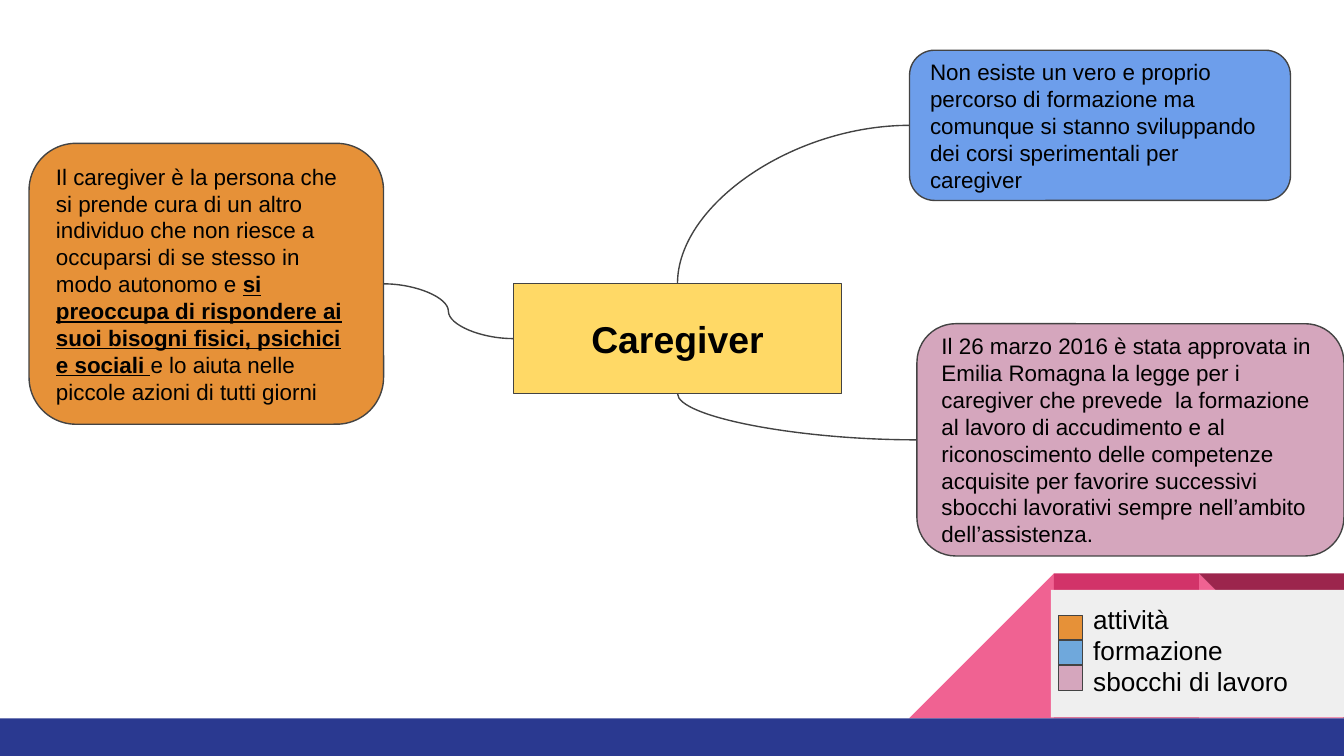
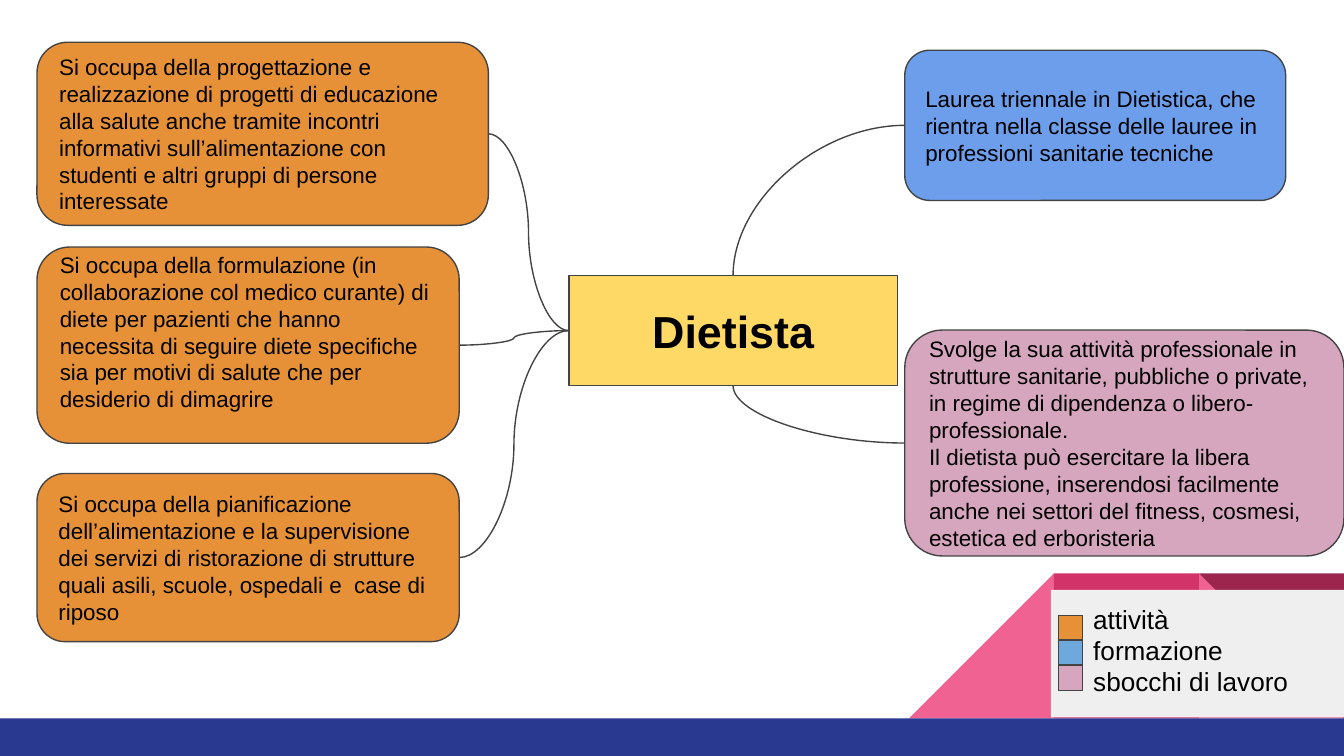
import dataclasses
import typing

import lxml.etree
import pptx
import pptx.dml.color
import pptx.enum.shapes
import pptx.enum.text
import pptx.oxml.ns
import pptx.util

Cm = pptx.util.Cm
qn = pptx.oxml.ns.qn
ShapeType = pptx.enum.shapes.MSO_SHAPE
Anchor = pptx.enum.text.MSO_ANCHOR
Align = pptx.enum.text.PP_ALIGN

TOP, LEFT, BOTTOM, RIGHT = range(4)


@dataclasses.dataclass(frozen=True)
class Theme:
    font: str = "Arial"
    text: str = "000000"
    outline: str = "434343"
    topic: str = "FFD966"
    activity: str = "E69138"
    training: str = "6D9EEB"
    training_key: str = "6FA8DC"
    career: str = "D5A6BD"
    legend: str = "EFEFEF"
    band: str = "2A3990"
    light_pink: str = "F06292"
    pink: str = "D23369"
    dark_pink: str = "9C254D"
    body_size: int = 12
    legend_size: int = 14
    line_width: float = 0.75


THEME = Theme()


class Box(typing.NamedTuple):
    left: float
    top: float
    width: float
    height: float


@dataclasses.dataclass(frozen=True)
class Leaf:
    box: Box
    color: str
    text: str
    leaf_side: int
    topic_side: int
    bottom_inset: float = 0.25


@dataclasses.dataclass(frozen=True)
class ConceptMap:
    topic: str
    topic_size: int
    topic_left: float
    topic_top: float
    leaves: tuple[Leaf, ...]


@dataclasses.dataclass(frozen=True)
class Ornament:
    kind: typing.Any
    box: Box
    color: str
    flipped: bool = False
    rotation: int = 0


SLIDE_WIDTH, SLIDE_HEIGHT = 25.4, 14.29
TILE = 2.74
BAND_TOP = 13.58
TILE_TOP = BAND_TOP - TILE
TILE_BOXES = [Box(SLIDE_WIDTH - n * TILE, TILE_TOP, TILE, TILE) for n in (3, 2, 1)]

ORNAMENTS = (
    Ornament(ShapeType.RIGHT_TRIANGLE, TILE_BOXES[2], THEME.light_pink),
    Ornament(ShapeType.RIGHT_TRIANGLE, TILE_BOXES[0], THEME.light_pink, flipped=True),
    Ornament(ShapeType.RECTANGLE, TILE_BOXES[1], THEME.pink),
    Ornament(ShapeType.RIGHT_TRIANGLE, TILE_BOXES[2], THEME.dark_pink, rotation=180),
    Ornament(ShapeType.RECTANGLE,
             Box(0, BAND_TOP, SLIDE_WIDTH, SLIDE_HEIGHT - BAND_TOP), THEME.band),
)

LEGEND_BOX = Box(19.86, 11.15, 5.54, 2.41)
LEGEND = (
    ("attività", THEME.activity),
    ("formazione", THEME.training_key),
    ("sbocchi di lavoro", THEME.career),
)
SWATCH = Box(20, 11.63, 0.46, 0.48)
SWATCH_STEP = 0.47

MAPS = (
    ConceptMap("Caregiver", 20, 9.7, 5.36, (
        Leaf(Box(0.55, 2.71, 6.7, 5.31), THEME.activity,
             "Il caregiver è la persona che si prende cura di un altro individuo che non "
             "riesce a occuparsi di se stesso in modo autonomo e *si preoccupa di rispondere "
             "ai suoi bisogni fisici, psichici e sociali *e lo aiuta nelle piccole azioni "
             "di tutti giorni", RIGHT, LEFT),
        Leaf(Box(17.19, 0.95, 7.2, 2.84), THEME.training,
             "Non esiste un vero e proprio percorso di formazione ma comunque si stanno "
             "sviluppando dei corsi sperimentali per caregiver", LEFT, TOP),
        Leaf(Box(17.33, 6.12, 8.07, 4.39), THEME.career,
             "Il 26 marzo 2016 è stata approvata in Emilia Romagna la legge per i caregiver "
             "che prevede  la formazione al lavoro di accudimento e al riconoscimento delle "
             "competenze acquisite per favorire successivi sbocchi lavorativi sempre "
             "nell’ambito dell’assistenza.", LEFT, BOTTOM),
    )),
    ConceptMap("Dietista", 24, 10.75, 5.21, (
        Leaf(Box(0.7, 0.8, 8.53, 3.46), THEME.activity,
             "Si occupa della progettazione e realizzazione di progetti di educazione alla "
             "salute anche tramite incontri informativi sull’alimentazione con studenti e "
             "altri gruppi di persone interessate", RIGHT, LEFT),
        Leaf(Box(0.7, 4.67, 7.98, 3.71), THEME.activity,
             "Si occupa della formulazione (in collaborazione col medico curante) di diete "
             "per pazienti che hanno necessita di seguire diete specifiche sia per motivi "
             "di salute che per desiderio di dimagrire", RIGHT, LEFT, bottom_inset=0.76),
        Leaf(Box(0.7, 8.95, 7.98, 3.18), THEME.activity,
             "Si occupa della pianificazione dell’alimentazione e la supervisione dei "
             "servizi di ristorazione di strutture quali asili, scuole, ospedali e  case "
             "di riposo", RIGHT, LEFT),
        Leaf(Box(17.1, 0.95, 7.2, 2.84), THEME.training,
             "Laurea triennale in Dietistica, che rientra nella classe delle lauree in "
             "professioni sanitarie tecniche", LEFT, TOP),
        Leaf(Box(17.1, 6.24, 8.3, 4.27), THEME.career,
             "Svolge la sua attività professionale in strutture sanitarie, pubbliche o "
             "private, in regime di dipendenza o libero-professionale.\n"
             "Il dietista può esercitare la libera professione, inserendosi facilmente "
             "anche nei settori del fitness, cosmesi, estetica ed erboristeria",
             LEFT, BOTTOM),
    )),
)


def apply_format(target: typing.Any, values: dict[str, typing.Any]) -> None:
    for name, value in values.items():
        setattr(target, name, value)


def rgb(color: str) -> pptx.dml.color.RGBColor:
    return pptx.dml.color.RGBColor.from_string(color)


def place(shape: typing.Any, box: Box) -> None:
    apply_format(shape, {name: Cm(value) for name, value in box._asdict().items()})


def outline(line: typing.Any) -> None:
    line.fill.solid()
    line.color.rgb = rgb(THEME.outline)
    line.width = pptx.util.Pt(THEME.line_width)


def paint(shape: typing.Any, color: str, outlined: bool = True) -> None:
    shape.fill.solid()
    shape.fill.fore_color.rgb = rgb(color)
    if outlined:
        outline(shape.line)
    else:
        shape.line.fill.background()


def add_box(slide: typing.Any, kind: typing.Any, box: Box, color: str,
            outlined: bool = True) -> typing.Any:
    shape = slide.shapes.add_shape(kind, *map(Cm, box))
    shape.shadow.inherit = False
    paint(shape, color, outlined)
    return shape


def write(shape: typing.Any, text: str, size: int, bold: bool = False,
          alignment: typing.Any = Align.LEFT, anchor: typing.Any = Anchor.MIDDLE,
          left_inset: float = 0.25, bottom_inset: float = 0.25) -> None:
    frame = shape.text_frame
    apply_format(frame, {
        "word_wrap": True,
        "auto_size": pptx.enum.text.MSO_AUTO_SIZE.NONE,
        "vertical_anchor": anchor,
        "margin_left": Cm(left_inset),
        "margin_top": Cm(0.25),
        "margin_right": Cm(0.25),
        "margin_bottom": Cm(bottom_inset),
    })
    for index, line in enumerate(text.split("\n")):
        paragraph = frame.add_paragraph() if index else frame.paragraphs[0]
        apply_format(paragraph, {"alignment": alignment, "space_before": pptx.util.Pt(0)})
        for part, piece in enumerate(line.split("*")):
            emphasized = part % 2 == 1
            run = paragraph.add_run()
            run.text = piece
            apply_format(run.font, {
                "name": THEME.font,
                "size": pptx.util.Pt(size),
                "bold": bold or emphasized,
                "underline": emphasized,
            })
            run.font.color.rgb = rgb(THEME.text)


def link(slide: typing.Any, leaf: Leaf, leaf_shape: typing.Any, topic: typing.Any) -> None:
    connector = slide.shapes.add_connector(
        pptx.enum.shapes.MSO_CONNECTOR.CURVE, 0, 0, 0, 0)
    connector.begin_connect(leaf_shape, leaf.leaf_side)
    connector.end_connect(topic, leaf.topic_side)
    outline(connector.line)
    properties = connector.element.spPr
    if leaf.topic_side in (TOP, BOTTOM):
        properties.find(qn("a:prstGeom")).set("prst", "curvedConnector2")
    lxml.etree.SubElement(properties, qn("a:effectLst"))


def draw_legend(slide: typing.Any) -> None:
    legend = slide.placeholders[1]
    place(legend, LEGEND_BOX)
    paint(legend, THEME.legend, outlined=False)
    write(legend, "\n".join(label for label, _ in LEGEND), THEME.legend_size,
          anchor=Anchor.TOP, left_inset=0.8)
    for paragraph in legend.text_frame.paragraphs:
        properties = paragraph._p.get_or_add_pPr()
        properties.set("marL", "0")
        properties.set("indent", "0")
        lxml.etree.SubElement(properties, qn("a:buNone"))
    for index, (_, color) in enumerate(LEGEND):
        box = SWATCH._replace(top=SWATCH.top + index * SWATCH_STEP)
        add_box(slide, ShapeType.RECTANGLE, box, color)


def draw_map(slide: typing.Any, concept_map: ConceptMap) -> None:
    topic = slide.shapes.title
    place(topic, Box(concept_map.topic_left, concept_map.topic_top, 6.21, 2.08))
    paint(topic, THEME.topic)
    write(topic, concept_map.topic, concept_map.topic_size, bold=True,
          alignment=Align.CENTER)
    for leaf in concept_map.leaves:
        shape = add_box(slide, ShapeType.ROUNDED_RECTANGLE, leaf.box, leaf.color)
        write(shape, leaf.text, THEME.body_size, bottom_inset=leaf.bottom_inset)
        link(slide, leaf, shape, topic)
    draw_legend(slide)


def decorate_master(master: typing.Any, slide: typing.Any) -> None:
    for index, ornament in enumerate(ORNAMENTS):
        shape = add_box(slide, ornament.kind, ornament.box, ornament.color, outlined=False)
        shape.rotation = ornament.rotation
        if ornament.flipped:
            shape.element.spPr.find(qn("a:xfrm")).set("flipH", "1")
        shape.element.nvSpPr.cNvPr.set("id", str(100 + index))
        master.shapes.element.append(shape.element)


def main() -> None:
    presentation = pptx.Presentation()
    apply_format(presentation, {
        "slide_width": Cm(SLIDE_WIDTH), "slide_height": Cm(SLIDE_HEIGHT)})
    layout = presentation.slide_layouts[1]
    slides = [presentation.slides.add_slide(layout) for _ in MAPS]
    decorate_master(presentation.slide_master, slides[0])
    for slide, concept_map in zip(slides, MAPS):
        draw_map(slide, concept_map)
    presentation.save("out.pptx")


if __name__ == "__main__":
    main()
